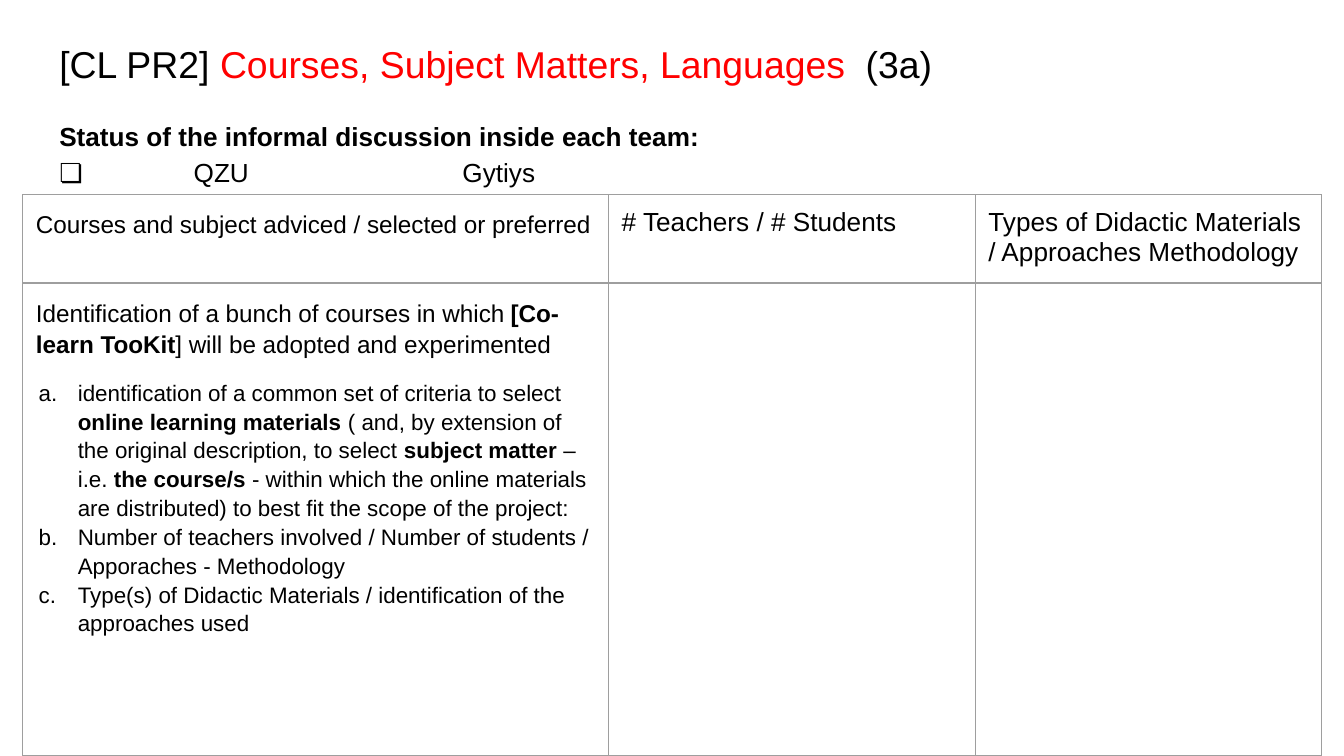
"""Build the slide on courses, subject matters and languages."""
import lxml.etree
import pptx
import pptx.dml.color
import pptx.enum.text
import pptx.oxml
import pptx.oxml.ns
import pptx.util

Cm = pptx.util.Cm
Pt = pptx.util.Pt
qn = pptx.oxml.ns.qn

COLORS = {"text": "000000", "accent": "FF0000", "border": "9E9E9E"}
INSET = Cm(0.25)
TAB = Cm(2.54)


def add_run(p, text, size=14, bold=False, color="text", font="Arial"):
    r = p.add_run()
    r.text = text
    r.font.size = Pt(size)
    r.font.bold = bold
    r.font.name = font
    r.font.color.rgb = pptx.dml.color.RGBColor.from_string(COLORS[color])


class SlideBuilder:
    def __init__(self, prs):
        self.slide = prs.slides.add_slide(prs.slide_layouts[1])

    def paragraph(self, tf, runs, first=False, spacing=1.15, before=0, size=14,
                  numbered=False):
        p = tf.paragraphs[0] if first else tf.add_paragraph()
        p.alignment = pptx.enum.text.PP_ALIGN.LEFT
        p.line_spacing = spacing
        p.space_before = Pt(before)
        p.space_after = Pt(0)
        pPr = p._p.get_or_add_pPr()
        pPr.set("marL", str(Cm(0.79) if numbered else 0))
        pPr.set("indent", str(Cm(-0.74) if numbered else 0))
        pPr.set("defTabSz", str(TAB))
        if numbered:
            lxml.etree.SubElement(pPr, qn("a:buFont"), typeface="Arial")
            lxml.etree.SubElement(pPr, qn("a:buAutoNum"), type="alphaLcPeriod")
        else:
            lxml.etree.SubElement(pPr, qn("a:buNone"))
        for text, fmt in runs:
            add_run(p, text, **{"size": size, **fmt})

    def placeholder(self, sp, left, top, width, height, paragraphs):
        sp.left, sp.top, sp.width, sp.height = Cm(left), Cm(top), Cm(width), Cm(height)
        tf = sp.text_frame
        tf.word_wrap = True
        tf.auto_size = pptx.enum.text.MSO_AUTO_SIZE.NONE
        tf.vertical_anchor = pptx.enum.text.MSO_ANCHOR.TOP
        tf.margin_left = tf.margin_right = tf.margin_top = tf.margin_bottom = INSET
        self.fill_text(tf, paragraphs)

    def fill_text(self, tf, paragraphs):
        for i, (runs, fmt) in enumerate(paragraphs):
            self.paragraph(tf, runs, first=i == 0, **fmt)

    def borders(self, cell):
        tcPr = cell._tc.get_or_add_tcPr()
        for i, side in enumerate(("lnL", "lnR", "lnT", "lnB")):
            ln = lxml.etree.Element(qn(f"a:{side}"), w=str(Pt(0.75)))
            fill = lxml.etree.SubElement(ln, qn("a:solidFill"))
            lxml.etree.SubElement(fill, qn("a:srgbClr"), val=COLORS["border"])
            tcPr.insert(i, ln)

    def table(self, left, top, widths, heights, contents):
        table = self.slide.shapes.add_table(
            len(heights), len(widths), Cm(left), Cm(top),
            Cm(sum(widths)), Cm(sum(heights))).table
        table.first_row = table.horz_banding = False
        for column, width in zip(table.columns, widths):
            column.width = Cm(width)
        for row, height, texts in zip(table.rows, heights, contents):
            row.height = Cm(height)
            for cell, paragraphs in zip(row.cells, texts):
                cell.margin_left = cell.margin_right = INSET
                cell.margin_top = cell.margin_bottom = INSET
                cell.fill.background()
                self.borders(cell)
                self.fill_text(cell.text_frame, paragraphs)


def main():
    prs = pptx.Presentation()
    prs.slide_width, prs.slide_height = Cm(25.4), Cm(14.29)
    s = SlideBuilder(prs)
    title, body = s.slide.placeholders
    bold = {"bold": True}
    intro = {"size": 13, "before": 10}
    item = {"size": 12, "numbered": True}
    plain = {"spacing": 1.0}

    s.placeholder(title, 0.87, 0.52, 23.67, 1.98, [
        ([("[CL PR2] ", {}),
          ("Courses, Subject Matters, Languages \t", {"color": "accent"}),
          ("(3a)", {})], {"size": 20, "spacing": 1.0}),
    ])
    s.placeholder(body, 0.87, 1.93, 23.67, 1.57, [
        ([("Status of the informal discussion inside each team:", bold)], {}),
        ([("❏\tQZU\t\tGytiys", {})], {}),
    ])

    headers = [
        [([("Courses and subject adviced / selected or preferred", {})], intro)],
        [([("# Teachers / # Students", {})], plain)],
        [([("Types of Didactic Materials / Approaches Methodology", {})], plain)],
    ]
    criteria = [
        ([("Identification of a bunch of courses in which ", {}),
          ("[Co-learn TooKit", bold),
          ("] will be adopted and experimented", {})], intro),
        ([("identification of a common set of criteria to select ", {}),
          ("online learning materials", bold),
          (" ( and, by extension of the original description, to select ", {}),
          ("subject matter", bold),
          (" – i.e. ", {}),
          ("the course/s ", bold),
          ("- within which the online materials are distributed) "
           "to best fit the scope of the project:", {})], {**item, "before": 10}),
        ([("Number of teachers involved / Number of students / "
           "Apporaches - Methodology", {})], item),
        ([("Type(s) of Didactic Materials / identification of the "
           "approaches used", {})], item),
    ]
    s.table(0.43, 3.68, [11.07, 6.93, 6.54], [1.67, 8.94],
            [headers, [criteria, [], []]])
    prs.save("out.pptx")


if __name__ == "__main__":
    main()
